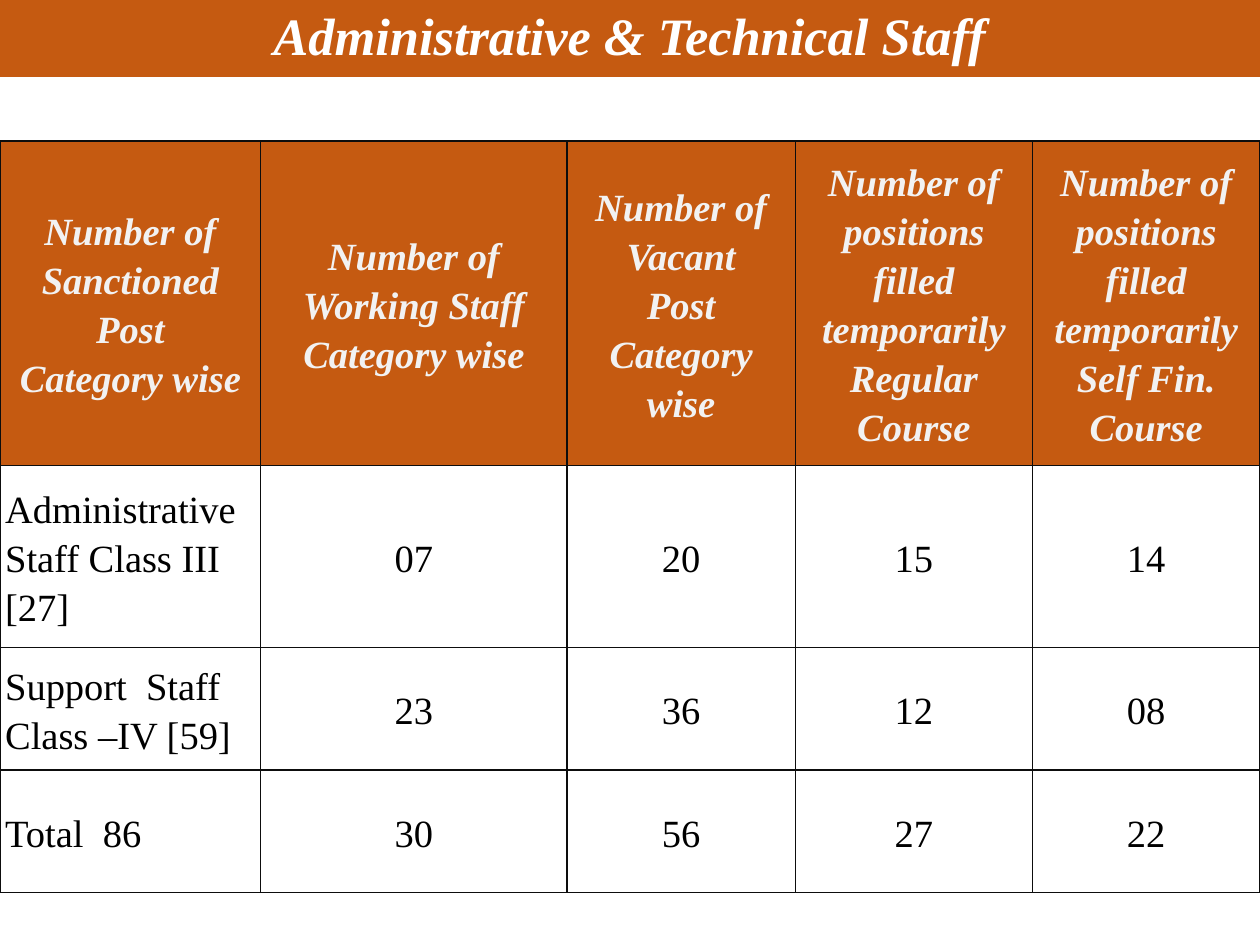
"""Build a one-slide deck with a table of administrative and technical staff."""
from lxml import etree
from pptx import Presentation
from pptx.dml.color import RGBColor
from pptx.enum.text import MSO_ANCHOR, PP_ALIGN
from pptx.oxml.ns import qn
from pptx.util import Pt

MIDDLE = MSO_ANCHOR.MIDDLE
LEFT, CENTER = PP_ALIGN.LEFT, PP_ALIGN.CENTER
FONT = "Times New Roman"
COLORS = {
    "band": "C55A11",
    "title": "FFFFFF",
    "header": "F2F2F2",
    "body": "000000",
    "border": "0D0D0D",
}
COLUMN_WIDTHS = [149, 175, 130.5, 135.5, 130]
ROW_HEIGHTS = [185.5, 104, 70, 70]
ROWS = [
    [
        "Number of Sanctioned\nPost\nCategory wise",
        "Number of Working Staff\nCategory wise",
        "Number of Vacant\nPost\nCategory wise",
        "Number of positions filled temporarily\nRegular Course",
        "Number of positions filled temporarily\nSelf Fin. Course",
    ],
    ["Administrative Staff Class III\n[27]", "07", "20", "15", "14"],
    ["Support  Staff\nClass –IV [59]", "23", "36", "12", "08"],
    ["Total  86", "30", "56", "27", "22"],
]


def color(name):
    return RGBColor.from_string(COLORS[name])


def write_text(frame, text, size, color_name, align, spacing, strong):
    frame.text = text
    for para in frame.paragraphs:
        para.alignment = align
        para.line_spacing = spacing
        font = para.font
        font.name, font.size = FONT, Pt(size)
        font.bold = font.italic = strong
        font.color.rgb = color(color_name)


def add_title(page, text):
    box = page.shapes.title
    box.left, box.top, box.width, box.height = Pt(0), Pt(0), Pt(720), Pt(44)
    box.fill.solid()
    box.fill.fore_color.rgb = color("band")
    box.text_frame.vertical_anchor = MIDDLE
    write_text(box.text_frame, text, 30, "title", CENTER, 0.9, True)


def add_borders(cell):
    properties = cell._tc.get_or_add_tcPr()
    for index, side in enumerate(("a:lnL", "a:lnR", "a:lnT", "a:lnB")):
        line = etree.Element(qn(side), w=str(Pt(1)))
        fill = etree.SubElement(line, qn("a:solidFill"))
        etree.SubElement(fill, qn("a:srgbClr"), val=COLORS["border"])
        properties.insert(index, line)


def format_cell(cell, text, is_header, align):
    cell.vertical_anchor = MIDDLE
    cell.margin_left = cell.margin_right = Pt(3)
    cell.margin_top = cell.margin_bottom = Pt(3)
    if is_header:
        cell.fill.solid()
        cell.fill.fore_color.rgb = color("band")
    else:
        cell.fill.background()
    color_name = "header" if is_header else "body"
    write_text(cell.text_frame, text, 22, color_name, align, 1.15, is_header)
    add_borders(cell)


def add_staff_table(page):
    frame = page.shapes.add_table(
        len(ROWS), len(COLUMN_WIDTHS), Pt(0), Pt(80.5),
        Pt(sum(COLUMN_WIDTHS)), Pt(sum(ROW_HEIGHTS)))
    table = frame.table
    for column, width in zip(table.columns, COLUMN_WIDTHS):
        column.width = Pt(width)
    for row, height in zip(table.rows, ROW_HEIGHTS):
        row.height = Pt(height)
    for row_index, texts in enumerate(ROWS):
        for column_index, text in enumerate(texts):
            is_header = row_index == 0
            align = CENTER if is_header or column_index else LEFT
            format_cell(table.cell(row_index, column_index), text, is_header, align)


def main():
    deck = Presentation()
    deck.slide_width, deck.slide_height = Pt(720), Pt(540)
    page = deck.slides.add_slide(deck.slide_layouts[5])
    add_staff_table(page)
    add_title(page, "Administrative & Technical Staff")
    deck.save("out.pptx")


if __name__ == "__main__":
    main()
